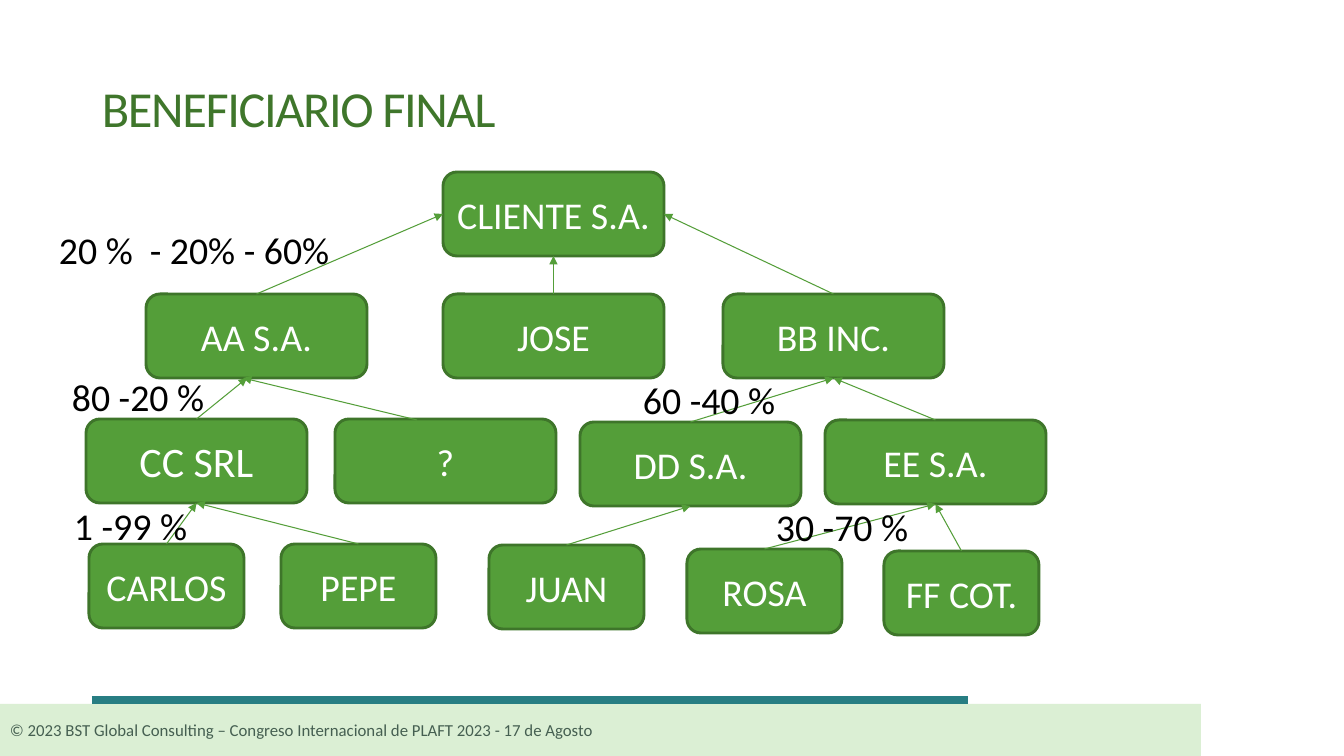
from lxml import etree
from pptx import Presentation
from pptx.dml.color import RGBColor
from pptx.enum.shapes import MSO_CONNECTOR, MSO_SHAPE
from pptx.enum.text import MSO_ANCHOR, PP_ALIGN
from pptx.oxml.ns import qn
from pptx.util import Pt

EMU_PER_PX = 914400 / 100.8
GREEN = RGBColor(0x54, 0x9E, 0x39)
DARK_GREEN = RGBColor(0x3E, 0x75, 0x2A)
TITLE_GREEN = RGBColor(0x3F, 0x76, 0x2B)
PALE_GREEN = RGBColor(0xDB, 0xEF, 0xD4)
SLATE = RGBColor(0x45, 0x5F, 0x51)
TEAL = RGBColor(0x28, 0x7E, 0x83)
WHITE = RGBColor(0xFF, 0xFF, 0xFF)
BLACK = RGBColor(0x00, 0x00, 0x00)
RECTANGLE, ROUNDED = MSO_SHAPE.RECTANGLE, MSO_SHAPE.ROUNDED_RECTANGLE
STRAIGHT = MSO_CONNECTOR.STRAIGHT
MIDDLE, TOP_ANCHOR = MSO_ANCHOR.MIDDLE, MSO_ANCHOR.TOP
LEFT_ALIGN, CENTER = PP_ALIGN.LEFT, PP_ALIGN.CENTER
TOP, LEFT, BOTTOM, RIGHT = range(4)
BOX_HEIGHT, WIDE, NARROW = 84, 221, 155


def px(*lengths):
    return [round(length * EMU_PER_PX) for length in lengths]


def write(shape, text, size, color, align=LEFT_ALIGN, anchor=MIDDLE, wrap=True):
    frame = shape.text_frame
    frame.word_wrap = wrap
    frame.vertical_anchor = anchor
    paragraph = frame.paragraphs[0]
    paragraph.alignment = align
    run = paragraph.add_run()
    run.text = text
    run.font.color.rgb = color
    for name, value in {"name": "Calibri", "size": Pt(size)}.items():
        setattr(run.font, name, value)
    return run


presentation = Presentation()
presentation.slide_width, presentation.slide_height = px(1344, 756)
slide = presentation.slides.add_slide(presentation.slide_layouts[6])
shapes = slide.shapes

footer = shapes.add_shape(RECTANGLE, *px(0, 704, 1201, 52))
footer.shadow.inherit = False
footer.fill.solid()
footer.fill.fore_color.rgb = PALE_GREEN
footer.line.fill.background()
write(footer, "© 2023 BST Global Consulting – Congreso Internacional de PLAFT 2023 - 17 de Agosto", 12, SLATE)

footer_rule = shapes.add_connector(STRAIGHT, *px(92, 700, 968, 700))
footer_rule.line.color.rgb = TEAL
footer_rule.line.width = Pt(6)
etree.SubElement(footer_rule._element.spPr, qn("a:effectLst"))

title = shapes.add_textbox(*px(92, 50, 1159, 115))
title_run = write(title, "BENEFICIARIO FINAL", 36, TITLE_GREEN)
title_run.font._element.set("spc", "-100")

entities = [
    ("CLIENTE S.A.", 443, 172, WIDE, 27),
    ("JOSE", 443, 294, WIDE, 27),
    ("AA S.A.", 146, 294, WIDE, 27),
    ("BB INC.", 723, 294, WIDE, 27),
    ("?", 335, 419, WIDE, 27),
    ("CC SRL", 86, 419, WIDE, 30),
    ("DD S.A.", 580, 422, WIDE, 27),
    ("EE S.A.", 825, 420, WIDE, 27),
    ("CARLOS", 89, 544, NARROW, 27),
    ("PEPE", 281, 544, NARROW, 27),
    ("JUAN", 489, 545, NARROW, 27),
    ("ROSA", 687, 549, NARROW, 27),
    ("FF COT.", 884, 551, NARROW, 27),
]
boxes = {}
for name, left, top, width, size in entities:
    box = shapes.add_shape(ROUNDED, *px(left, top, width, BOX_HEIGHT))
    box.shadow.inherit = False
    box.fill.solid()
    box.fill.fore_color.rgb = GREEN
    box.line.color.rgb = DARK_GREEN
    box.line.width = Pt(2.08)
    write(box, name, size, WHITE, CENTER)
    boxes[name] = box

holdings = [
    ("AA S.A.", "CLIENTE S.A.", LEFT, None, None),
    ("BB INC.", "CLIENTE S.A.", RIGHT, None, None),
    ("JOSE", "CLIENTE S.A.", BOTTOM, None, None),
    ("CC SRL", "AA S.A.", None, None, (247, 378)),
    ("?", "AA S.A.", None, (417, 420), (243, 378)),
    ("DD S.A.", "BB INC.", BOTTOM, None, None),
    ("EE S.A.", "BB INC.", BOTTOM, None, None),
    ("JUAN", "DD S.A.", BOTTOM, None, None),
    ("ROSA", "EE S.A.", BOTTOM, None, None),
    ("FF COT.", "EE S.A.", BOTTOM, None, None),
    ("PEPE", "CC SRL", BOTTOM, None, None),
    ("CARLOS", "CC SRL", BOTTOM, None, None),
]
for owner, company, side, start, end in holdings:
    arrow = shapes.add_connector(STRAIGHT, *px(*(start or (0, 0)), *(end or (0, 0))))
    if start is None:
        arrow.begin_connect(boxes[owner], TOP)
    if end is None:
        arrow.end_connect(boxes[company], side)
    arrow.line.color.rgb = GREEN
    arrow.line.width = Pt(0.75)
    etree.SubElement(arrow.line._get_or_add_ln(), qn("a:tailEnd"), type="triangle")
    etree.SubElement(arrow._element.spPr, qn("a:effectLst"))

shares = [
    ("80 -20 %", 62, 369, 153),
    ("60 -40 %", 633, 372, 153),
    ("1 -99 %", 64, 498, 134),
    ("30 -70 %", 766, 499, 153),
    ("20 %  - 20% - 60%", 49, 222, 293),
]
for text, left, top, width in shares:
    label = shapes.add_textbox(*px(left, top, width, 56))
    write(label, text, 27, BLACK, anchor=TOP_ANCHOR, wrap=False)

presentation.save("out.pptx")
